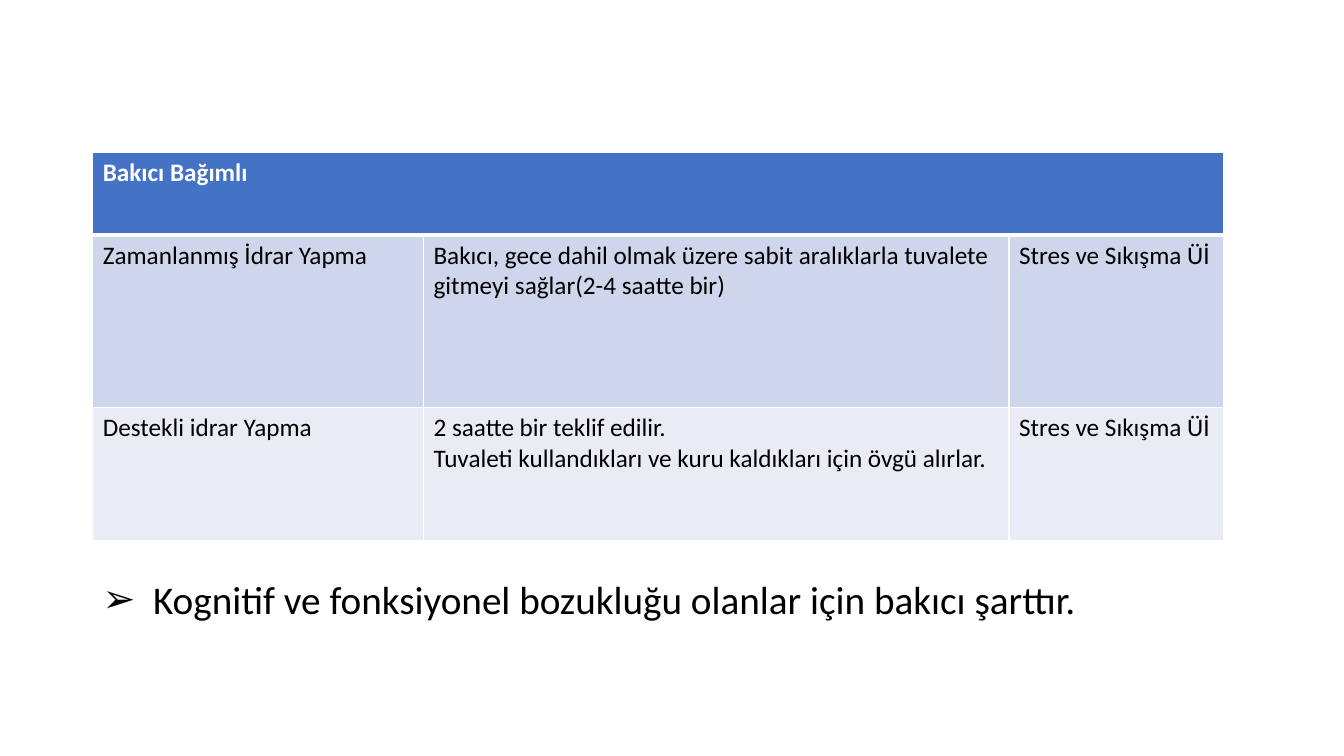
"""Build the slide on caregiver-dependent voiding methods."""
import lxml.etree
import pptx
import pptx.dml.color
import pptx.oxml
import pptx.oxml.ns
import pptx.util

Pt = pptx.util.Pt
qn = pptx.oxml.ns.qn


def rgb(value):
    return pptx.dml.color.RGBColor.from_string(value)


def write(tf, text, color, **font):
    tf.text = text
    for p in tf.paragraphs:
        for r in p.runs:
            r.font.color.rgb = rgb(color)
            for name, value in font.items():
                setattr(r.font, name, value)


prs = pptx.Presentation()
prs.slide_width, prs.slide_height = Pt(960), Pt(540)
s = prs.slides.add_slide(prs.slide_layouts[6])

rows = [
    ("Bakıcı Bağımlı", "", ""),
    ("Zamanlanmış İdrar Yapma",
     "Bakıcı, gece dahil olmak üzere sabit aralıklarla tuvalete gitmeyi sağlar(2-4 saatte bir)",
     "Stres ve Sıkışma Üİ"),
    ("Destekli idrar Yapma",
     "2 saatte bir teklif edilir.\nTuvaleti kullandıkları ve kuru kaldıkları için övgü alırlar.",
     "Stres ve Sıkışma Üİ"),
]
widths = [236.2, 418.3, 153.4]
heights = [59, 123.1, 95]
fills = ["4472C4", "CFD5EA", "E9EBF5"]

table = s.shapes.add_table(
    3, 3, Pt(66.3), Pt(109), Pt(sum(widths)), Pt(sum(heights))).table
for column, width in zip(table.columns, widths):
    column.width = Pt(width)
for i, (texts, height, fill) in enumerate(zip(rows, heights, fills)):
    table.rows[i].height = Pt(height)
    for j, text in enumerate(texts):
        cell = table.cell(i, j)
        tcPr = cell._tc.get_or_add_tcPr()
        for side in "LRTB":
            heavy = (i, side) in ((0, "B"), (1, "T"))
            ln = lxml.etree.SubElement(tcPr, qn(f"a:ln{side}"), w=str(Pt(3 if heavy else 1)))
            line = lxml.etree.SubElement(ln, qn("a:solidFill"))
            lxml.etree.SubElement(line, qn("a:srgbClr"), val="FFFFFF")
        cell.fill.solid()
        cell.fill.fore_color.rgb = rgb(fill)
        write(cell.text_frame, text, "000000" if i else "FFFFFF",
              size=Pt(18), name="Calibri", bold=i == 0)
table.cell(0, 0).merge(table.cell(0, 2))

sp = s.shapes.add_textbox(Pt(66.3), Pt(407.5), Pt(870), Pt(41))
tf = sp.text_frame
tf.word_wrap = True
write(tf, "Kognitif ve fonksiyonel bozukluğu olanlar için bakıcı şarttır.",
      "000000", size=Pt(28), name="Calibri")
pPr = tf.paragraphs[0]._p.get_or_add_pPr()
for name, value in {"marL": Pt(36), "indent": Pt(-36)}.items():
    pPr.set(name, str(value))
lxml.etree.SubElement(pPr, qn("a:buFont"), typeface="Wingdings 3")
pPr[-1].set("typeface", "Calibri")
lxml.etree.SubElement(pPr, qn("a:buChar"), char="➢")

prs.save("out.pptx")
